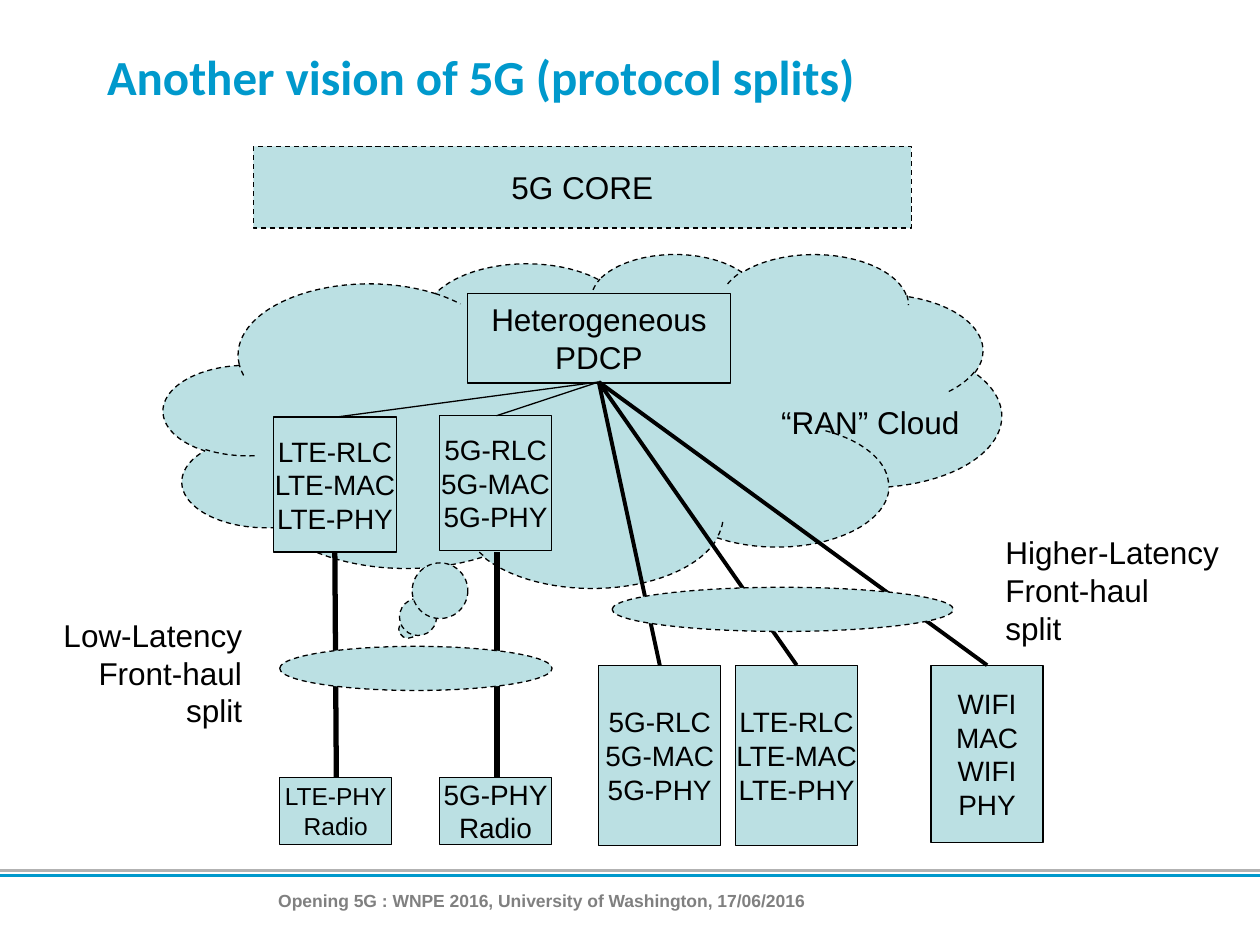
"""Build the slide on 5G protocol splits between cloud RAN and radio sites."""
from pptx import Presentation
from pptx import util as u
from pptx.dml.color import RGBColor
from pptx.enum import dml, shapes, text
from pptx.oxml.ns import qn
from lxml import etree

BLACK, PALE, BLUE, SILVER, GREY = "000000", "BBE0E3", "0099CC", "B2B2B2", "808080"
LEFT, CENTER, RIGHT = text.PP_ALIGN.LEFT, text.PP_ALIGN.CENTER, text.PP_ALIGN.RIGHT
TOP, MIDDLE = text.MSO_ANCHOR.TOP, text.MSO_ANCHOR.MIDDLE
RECT, OVAL = shapes.MSO_SHAPE.RECTANGLE, shapes.MSO_SHAPE.OVAL
CLOUD = shapes.MSO_SHAPE.CLOUD_CALLOUT

deck = Presentation()
deck.slide_width, deck.slide_height = u.Cm(25.4), u.Cm(19.05)
slide = deck.slides.add_slide(deck.slide_layouts[6])


def color(value):
    """Turn a hex string into a colour."""
    return RGBColor.from_string(value)


def put(kind, place, lines=(), size=18, fill=PALE, dash=False, align=CENTER,
        anchor=MIDDLE, wrap=False, font="Arial", ink=BLACK, bold=False):
    """Add a shape, or a text box when kind is None, with one paragraph per line."""
    place = [u.Cm(length) for length in place]
    if kind is None:
        item = slide.shapes.add_textbox(*place)
    else:
        item = slide.shapes.add_shape(kind, *place)
        item.shadow.inherit = False
        if fill:
            item.fill.solid()
            item.fill.fore_color.rgb = color(fill)
        else:
            item.fill.background()
        item.line.color.rgb = color(BLACK)
        item.line.width = u.Pt(0.75)
        if dash:
            item.line.dash_style = dml.MSO_LINE.DASH
    frame = item.text_frame
    frame.word_wrap, frame.vertical_anchor = wrap, anchor
    style = {"size": u.Pt(size), "name": font, "bold": bold}
    for index, line in enumerate(lines):
        paragraph = frame.add_paragraph() if index else frame.paragraphs[0]
        paragraph.alignment = align
        run = paragraph.add_run()
        run.text = line
        run.font.color.rgb = color(ink)
        for key, value in style.items():
            setattr(run.font, key, value)


label = {"wrap": True, "anchor": TOP}
lte_stack = ["LTE-RLC", "LTE-MAC", "LTE-PHY"]
nr_stack = ["5G-RLC", "5G-MAC", "5G-PHY"]

put(None, (1.91, 0.33, 22.81, 2.41), ["Another vision of 5G (protocol splits)"], 28,
    align=LEFT, wrap=True, font="Calibri", ink=BLUE, bold=True)
put(CLOUD, (3.3, 5.11, 16.89, 6.73), dash=True)
put(None, (15.49, 8, 4.11, 1.02), ["“RAN” Cloud"], **label)
put(RECT, (9.42, 5.92, 5.31, 1.8), ["Heterogeneous PDCP"], fill=None, **label)
put(RECT, (5.11, 2.95, 13.26, 1.65), ["5G CORE"], dash=True)

protocol_boxes = [
    ((5.51, 8.41, 2.49, 2.72), lte_stack, 16),
    ((8.86, 8.38, 2.26, 2.72), nr_stack, 16),
    ((5.64, 15.67, 2.26, 1.35), ["LTE-PHY", "Radio"], 14),
    ((8.86, 15.67, 2.26, 1.35), ["5G-PHY", "Radio"], 16),
    ((12.07, 13.41, 2.46, 3.63), nr_stack, 16),
    ((14.83, 13.41, 2.46, 3.63), lte_stack, 16),
    ((18.77, 13.41, 2.26, 3.58), ["WIFI", "MAC", "WIFI", "PHY"], 16),
]
for place, lines, size in protocol_boxes:
    put(RECT, place, lines, size)

pdcp = (12.07, 7.7)
links = [
    ((0, 17.55), (25.4, 17.55), SILVER, 1.5),
    ((0, 17.65), (25.4, 17.65), BLUE, 1.5),
    (pdcp, (6.76, 8.41), BLACK, 0.75),
    (pdcp, (10.01, 8.38), BLACK, 0.75),
    ((6.75, 11.13), (6.78, 15.67), BLACK, 3),
    ((10.02, 11.13), (10.02, 15.67), BLACK, 3),
]
links += [(pdcp, (x, 13.41), BLACK, 2.25) for x in (13.3, 16.06, 19.9)]
for start, end, ink, width in links:
    link = slide.shapes.add_connector(
        shapes.MSO_CONNECTOR.STRAIGHT, *[u.Cm(length) for length in start + end])
    link.line.color.rgb = color(ink)
    link.line.width = u.Pt(width)
    etree.SubElement(link.element.spPr, qn("a:effectLst"))

for fronthaul in ((5.64, 13.03, 5.49, 0.89), (12.34, 11.84, 6.88, 0.89)):
    put(OVAL, fronthaul, dash=True)
put(None, (0.61, 12.29, 4.52, 2.57), ["Low-Latency Front-haul", "split"],
    align=RIGHT, **label)
put(None, (20.02, 10.62, 5.18, 2.57), ["Higher-Latency Front-haul", "split"],
    align=LEFT, **label)
put(None, (5.36, 17.81, 14.1, 1.24),
    ["Opening 5G : WNPE 2016, University of Washington, 17/06/2016"], 10,
    align=LEFT, ink=GREY, bold=True, **label)

deck.save("out.pptx")
